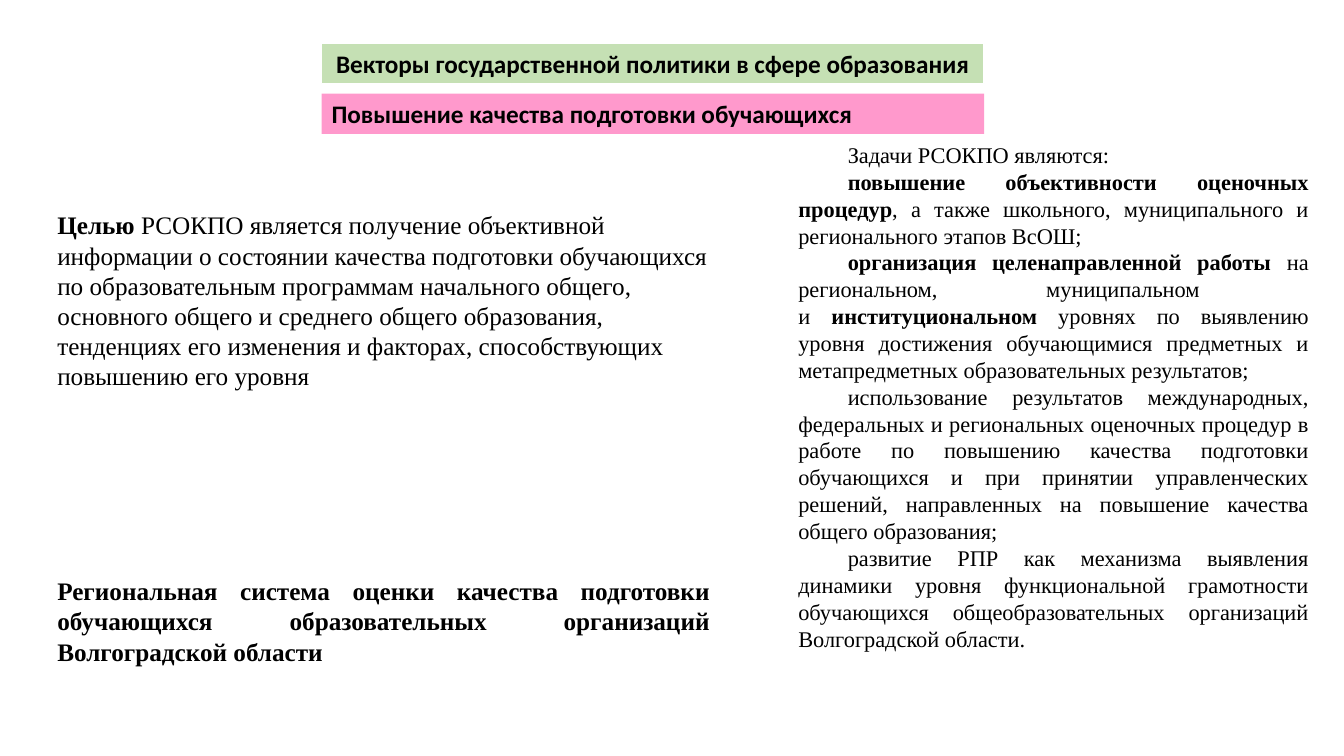
from dataclasses import dataclass
from typing import Optional

from pptx import Presentation
from pptx import util as u
from pptx.dml.color import RGBColor
from pptx.enum import shapes, text

PX = 9144  # EMU in one px, 100 px to the inch
BLACK = RGBColor(0x00, 0x00, 0x00)
WHITE = RGBColor(0xFF, 0xFF, 0xFF)
GREEN = RGBColor(0xC5, 0xE0, 0xB4)
PINK = RGBColor(0xFF, 0x99, 0xCC)
LEFT, CENTER, JUSTIFY = text.PP_ALIGN.LEFT, text.PP_ALIGN.CENTER, text.PP_ALIGN.JUSTIFY
SERIF = "Times New Roman"
TASK_INDENT = 49


@dataclass
class Span:
    text: str
    bold: bool = False


@dataclass
class Block:
    box: tuple[int, int, int, int]
    paragraphs: list[list[Span]]
    align: text.PP_ALIGN = LEFT
    font: str = SERIF
    size: int = 18
    indent: int = 0
    fill: Optional[RGBColor] = None
    line: Optional[RGBColor] = None


BLOCKS = [
    # Headings
    Block((319, 43, 657, 40),
          [[Span("Векторы государственной политики в сфере образования", True)]],
          CENTER, "Calibri", fill=GREEN, line=WHITE),
    Block((319, 93, 657, 40),
          [[Span("Повышение качества подготовки обучающихся", True)]],
          font="Calibri", fill=PINK),
    # Goal
    Block((47, 203, 667, 192), [[
        Span("Целью", True),
        Span(" РСОКПО является получение объективной информации о состоянии качества "
             "подготовки обучающихся по образовательным программам начального общего, "
             "основного общего и среднего общего образования, тенденциях его изменения "
             "и факторах, способствующих повышению его уровня"),
    ]]),
    # Tasks
    Block((782, 135, 526, 522), [
        [Span("Задачи РСОКПО являются:")],
        [Span("повышение объективности оценочных процедур", True),
         Span(", а также школьного, муниципального и регионального этапов ВсОШ;")],
        [Span("организация целенаправленной работы ", True),
         Span("на региональном, муниципальном \nи "),
         Span("институциональном", True),
         Span(" уровнях по выявлению уровня достижения обучающимися предметных и "
              "метапредметных образовательных результатов;")],
        [Span("использование результатов международных, федеральных и региональных "
              "оценочных процедур в работе по повышению качества подготовки обучающихся "
              "и при принятии управленческих решений, направленных на повышение качества "
              "общего образования;")],
        [Span("развитие РПР как механизма выявления динамики уровня функциональной "
              "грамотности обучающихся общеобразовательных организаций "
              "Волгоградской области.")],
    ], JUSTIFY, size=16, indent=TASK_INDENT),
    # Name of the system
    Block((47, 566, 667, 101),
          [[Span("Региональная система оценки качества подготовки обучающихся "
                 "образовательных организаций Волгоградской области", True)]], JUSTIFY),
]


def set_format(target, values: dict) -> None:
    for name, value in values.items():
        setattr(target, name, value)


def add_frame(slide, block: Block):
    box = [value * PX for value in block.box]
    if block.fill is None:
        return slide.shapes.add_textbox(*box)
    shape = slide.shapes.add_shape(shapes.MSO_SHAPE.RECTANGLE, *box)
    shape.shadow.inherit = False
    shape.fill.solid()
    shape.fill.fore_color.rgb = block.fill
    if block.line is None:
        shape.line.fill.background()
    else:
        shape.line.color.rgb = block.line
        shape.line.width = u.Pt(1)
    return shape


def add_span(paragraph, span: Span, block: Block) -> None:
    for number, piece in enumerate(span.text.split("\n")):
        if number:
            paragraph.add_line_break()
        run = paragraph.add_run()
        run.text = piece
        set_format(run.font, {"name": block.font, "size": u.Pt(block.size), "bold": span.bold})
        run.font.color.rgb = BLACK


def add_block(slide, block: Block) -> None:
    frame = add_frame(slide, block).text_frame
    set_format(frame, {
        "word_wrap": True,
        "auto_size": text.MSO_AUTO_SIZE.SHAPE_TO_FIT_TEXT,
        "vertical_anchor": text.MSO_ANCHOR.TOP,
    })
    for number, spans in enumerate(block.paragraphs):
        paragraph = frame.add_paragraph() if number else frame.paragraphs[0]
        paragraph.alignment = block.align
        if block.indent:
            paragraph._p.get_or_add_pPr().set("indent", str(block.indent * PX))
        for span in spans:
            add_span(paragraph, span, block)


def main() -> None:
    presentation = Presentation()
    set_format(presentation, {"slide_width": 1333 * PX, "slide_height": 750 * PX})
    slide = presentation.slides.add_slide(presentation.slide_layouts[6])
    for block in BLOCKS:
        add_block(slide, block)
    presentation.save("out.pptx")


if __name__ == "__main__":
    main()
